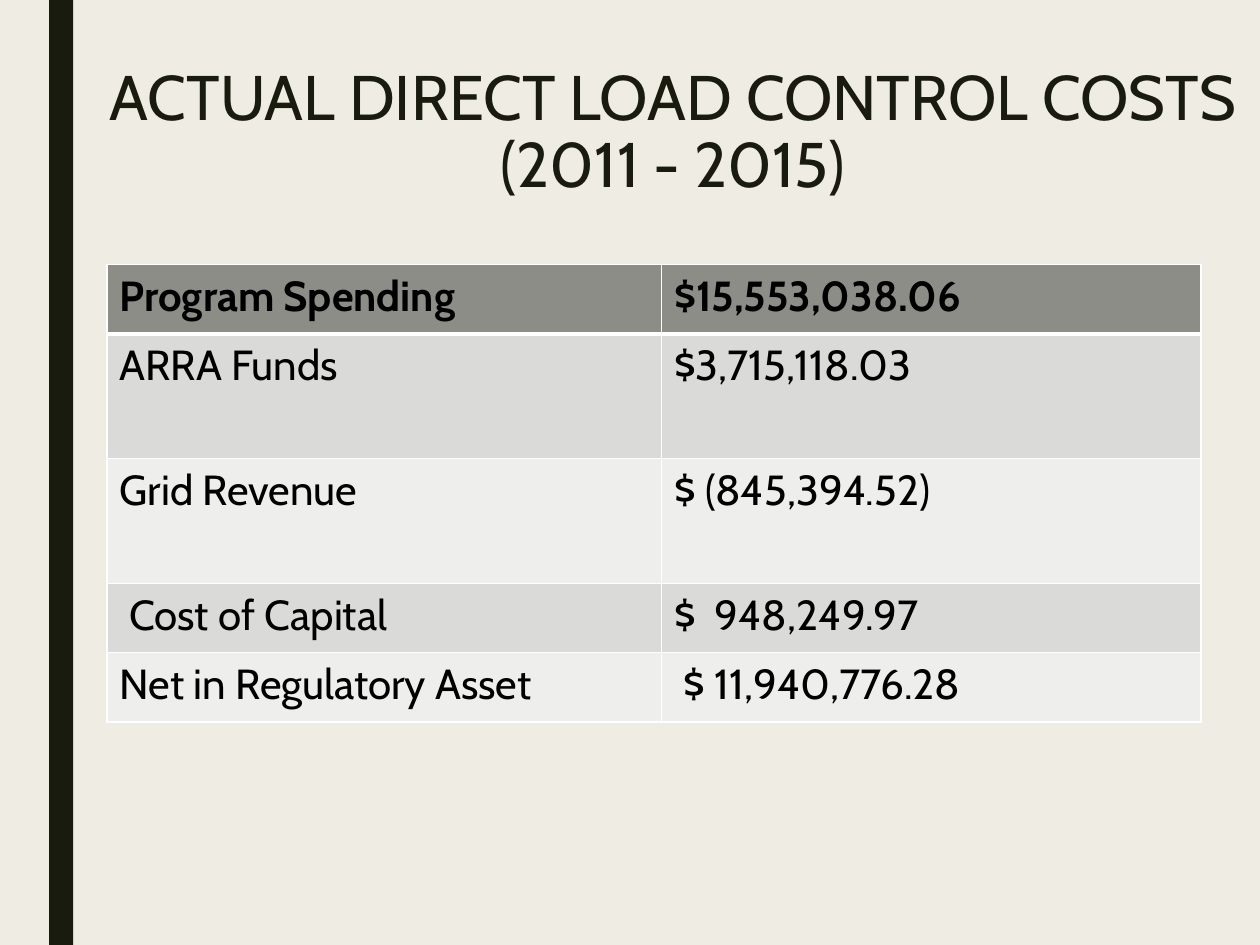
from lxml import etree
from pptx import Presentation
from pptx.dml.color import RGBColor
from pptx.enum import shapes, text
from pptx.oxml.ns import qn
from pptx.util import Inches, Pt

# Content
TITLE = "ACTUAL DIRECT LOAD CONTROL COSTS (2011 - 2015)"
COSTS = [
    ("Program Spending", "$15,553,038.06"),
    ("ARRA Funds", "$3,715,118.03"),
    ("Grid Revenue", "$ (845,394.52)"),
    (" Cost of Capital", "$  948,249.97"),
    ("Net in Regulatory Asset", " $ 11,940,776.28"),
]
COL_WIDTHS = [4.4, 4.28]
ROW_HEIGHTS = [0.55, 0.99, 0.99, 0.55, 0.55]

# Look
CREAM = RGBColor(0xEF, 0xED, 0xE3)
DARK = RGBColor(0x19, 0x1B, 0x0E)
BLACK = RGBColor(0, 0, 0)
WHITE = RGBColor(0xFF, 0xFF, 0xFF)
HEADER = RGBColor(0x8C, 0x8D, 0x86)
BANDS = [RGBColor(0xEE, 0xEE, 0xED), RGBColor(0xDA, 0xDB, 0xD9)]
TITLE_FONT = {"name": "Cabin", "size": Pt(36)}
CELL_FONT = {"name": "Cabin", "size": Pt(24)}


def write(tf, words, color, font):
    p = tf.paragraphs[0]
    r = p.add_run()
    r.text = words
    for key, value in font.items():
        setattr(r.font, key, value)
    r.font.color.rgb = color
    return p


def add_borders(cell, widths):
    tc_pr = cell._tc.get_or_add_tcPr()
    for side, width in widths.items():
        ln = etree.SubElement(tc_pr, qn(f"a:ln{side}"), w=str(Pt(width)))
        fill = etree.SubElement(ln, qn("a:solidFill"))
        etree.SubElement(fill, qn("a:srgbClr"), val=str(WHITE))


prs = Presentation()
prs.slide_width, prs.slide_height = Inches(10), Inches(7.5)
s = prs.slides.add_slide(prs.slide_layouts[6])
s.background.fill.solid()
s.background.fill.fore_color.rgb = CREAM

# Side bar
bar = s.shapes.add_shape(shapes.MSO_SHAPE.RECTANGLE, Inches(0.39), 0,
                         Inches(0.19), prs.slide_height)
bar.shadow.inherit = False
bar.fill.solid()
bar.fill.fore_color.rgb = DARK
bar.line.fill.background()

# Cost table
table = s.shapes.add_table(len(COSTS), len(COL_WIDTHS), Inches(0.85), Inches(2.1),
                           Inches(sum(COL_WIDTHS)), Inches(sum(ROW_HEIGHTS))).table
for col, width in zip(table.columns, COL_WIDTHS):
    col.width = Inches(width)
for i, (row, height) in enumerate(zip(table.rows, ROW_HEIGHTS)):
    row.height = Inches(height)
    for cell, words in zip(row.cells, COSTS[i]):
        add_borders(cell, {"L": 1, "R": 1, "T": 3 if i == 1 else 1,
                           "B": 3 if i == 0 else 1})
        cell.fill.solid()
        cell.fill.fore_color.rgb = BANDS[i % 2] if i else HEADER
        write(cell.text_frame, words, BLACK, {**CELL_FONT, "bold": i == 0})

# Title
tf = s.shapes.add_textbox(Inches(0.68), Inches(0.48),
                          Inches(9.32), Inches(1.62)).text_frame
tf.word_wrap = True
p = write(tf, TITLE, DARK, TITLE_FONT)
p.alignment = text.PP_ALIGN.CENTER
p.line_spacing = 0.89

prs.save("out.pptx")
